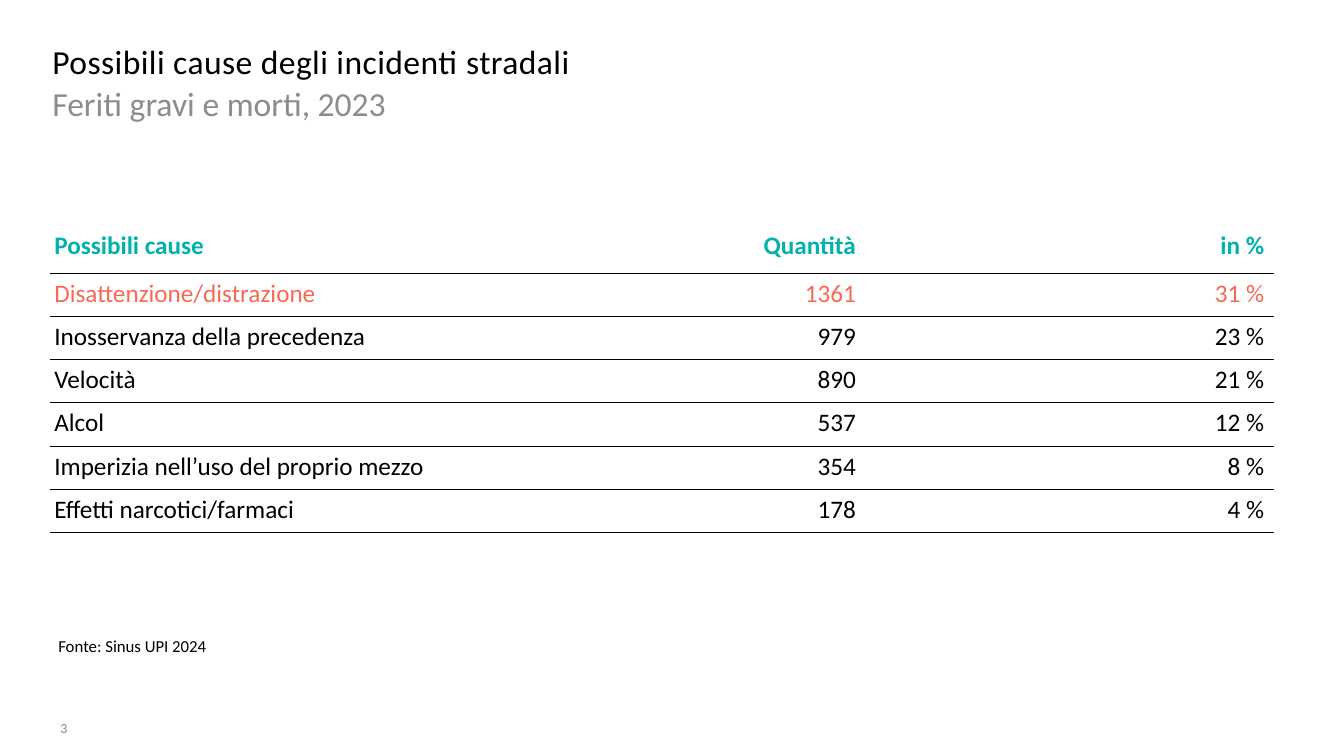
from dataclasses import dataclass

from lxml.etree import SubElement
from pptx import Presentation
from pptx.dml.color import RGBColor
from pptx.enum.text import PP_ALIGN
from pptx.oxml.ns import qn
from pptx.util import Cm, Pt


@dataclass(frozen=True)
class Theme:
    """Fonts, colours and type sizes of the slide."""
    font: str = "Calibri"
    text: str = "000000"
    muted: str = "8C8C8C"
    header: str = "00B2AA"
    highlight: str = "F86852"
    heading_size: int = 24
    table_size: int = 18
    source_size: int = 12
    number_size: int = 10
    rule: float = 0.5
    closing_rule: float = 1


class SlideBuilder:
    """Adds styled elements to the current slide."""

    def __init__(self, theme, slide):
        """Keep the theme and the slide."""
        self.theme = theme
        self.slide = slide

    def style(self, paragraph, size, color, bold=False):
        """Format every run of a paragraph."""
        paragraph.font.size = Pt(size)
        for run in paragraph.runs:
            run.font.name = self.theme.font
            run.font.size = Pt(size)
            run.font.bold = bold
            run.font.color.rgb = RGBColor.from_string(color)

    def text(self, wording, box, size, color, inset=(0, 0), spacing=None, after=0, tracking=0):
        """Add a wrapped line of text."""
        frame = self.slide.shapes.add_textbox(*map(Cm, box)).text_frame
        frame.word_wrap = True
        frame.margin_left = frame.margin_right = Cm(inset[0])
        frame.margin_top = frame.margin_bottom = Cm(inset[1])
        frame.text = wording
        paragraph = frame.paragraphs[0]
        paragraph.line_spacing = spacing
        paragraph.space_after = Pt(after)
        self.style(paragraph, size, color)
        if tracking:
            paragraph.runs[0].font._element.set("spc", str(round(tracking * 100)))

    def border(self, cell, side, width):
        """Draw one cell edge, or clear it when the width is zero."""
        edge = SubElement(cell._tc.get_or_add_tcPr(), qn(f"a:{side}"), w=str(Pt(width)))
        if width:
            fill = SubElement(edge, qn("a:solidFill"))
            SubElement(fill, qn("a:srgbClr"), val=self.theme.text)
        else:
            SubElement(edge, qn("a:noFill"))

    def cell(self, cell, wording, color, bold, align, rules):
        """Fill and format one table cell."""
        cell.margin_left, cell.margin_right = Cm(0.1), Cm(0.25)
        cell.margin_top = cell.margin_bottom = Cm(0.13)
        cell.text = wording
        paragraph = cell.text_frame.paragraphs[0]
        paragraph.alignment = align
        self.style(paragraph, self.theme.table_size, color, bold)
        for side, width in zip(("lnL", "lnR", "lnT", "lnB"), (0, 0, *rules)):
            self.border(cell, side, width)
        cell.fill.background()

    def table(self, rows, left, top, widths, header_height, row_height):
        """Add a ruled table with a header and a highlighted first cause."""
        heights = [header_height] + [row_height] * (len(rows) - 1)
        table = self.slide.shapes.add_table(
            len(rows), len(widths), Cm(left), Cm(top), Cm(sum(widths)), Cm(sum(heights))
        ).table
        table.first_row = table.horz_banding = False
        for column, width in zip(table.columns, widths):
            column.width = Cm(width)
        for row, height in zip(table.rows, heights):
            row.height = Cm(height)
        theme = self.theme
        inner = [theme.rule] * (len(rows) - 2) + [theme.closing_rule]
        rules = [0, *inner, 0]
        for i, causes in enumerate(rows):
            color = {0: theme.header, 1: theme.highlight}.get(i, theme.text)
            for j, wording in enumerate(causes):
                align = PP_ALIGN.RIGHT if j else PP_ALIGN.LEFT
                self.cell(table.cell(i, j), wording, color, i == 0, align, rules[i:i + 2])


CAUSES = [
    ("Possibili cause", "Quantità", "in %"),
    ("Disattenzione/distrazione", "1361", "31 %"),
    ("Inosservanza della precedenza", "979", "23 %"),
    ("Velocità", "890", "21 %"),
    ("Alcol", "537", "12 %"),
    ("Imperizia nell’uso del proprio mezzo", "354", "8 %"),
    ("Effetti narcotici/farmaci", "178", "4 %"),
    ("", "", ""),
]


def main():
    """Build and save the slide."""
    presentation = Presentation()
    presentation.slide_width, presentation.slide_height = Cm(33.87), Cm(19.05)
    theme = Theme()
    builder = SlideBuilder(theme, presentation.slides.add_slide(presentation.slide_layouts[6]))
    builder.text("Possibili cause degli incidenti stradali", (1.32, 1.02, 31.2, 0.9),
                 theme.heading_size, theme.text, tracking=0.3)
    builder.text("Feriti gravi e morti, 2023", (1.32, 2.03, 31.2, 1),
                 theme.heading_size, theme.muted, spacing=1.05, after=12)
    builder.table(CAUSES, 1.27, 5.69, (16.33, 4.22, 10.29), 1.19, 1.09)
    builder.text("Fonte: Sinus UPI 2024", (1.22, 15.88, 31.57, 0.77),
                 theme.source_size, theme.text, inset=(0.25, 0.13), after=6)
    builder.text("3", (1.52, 18.14, 2.26, 0.46), theme.number_size, theme.muted)
    presentation.save("out.pptx")


if __name__ == "__main__":
    main()
